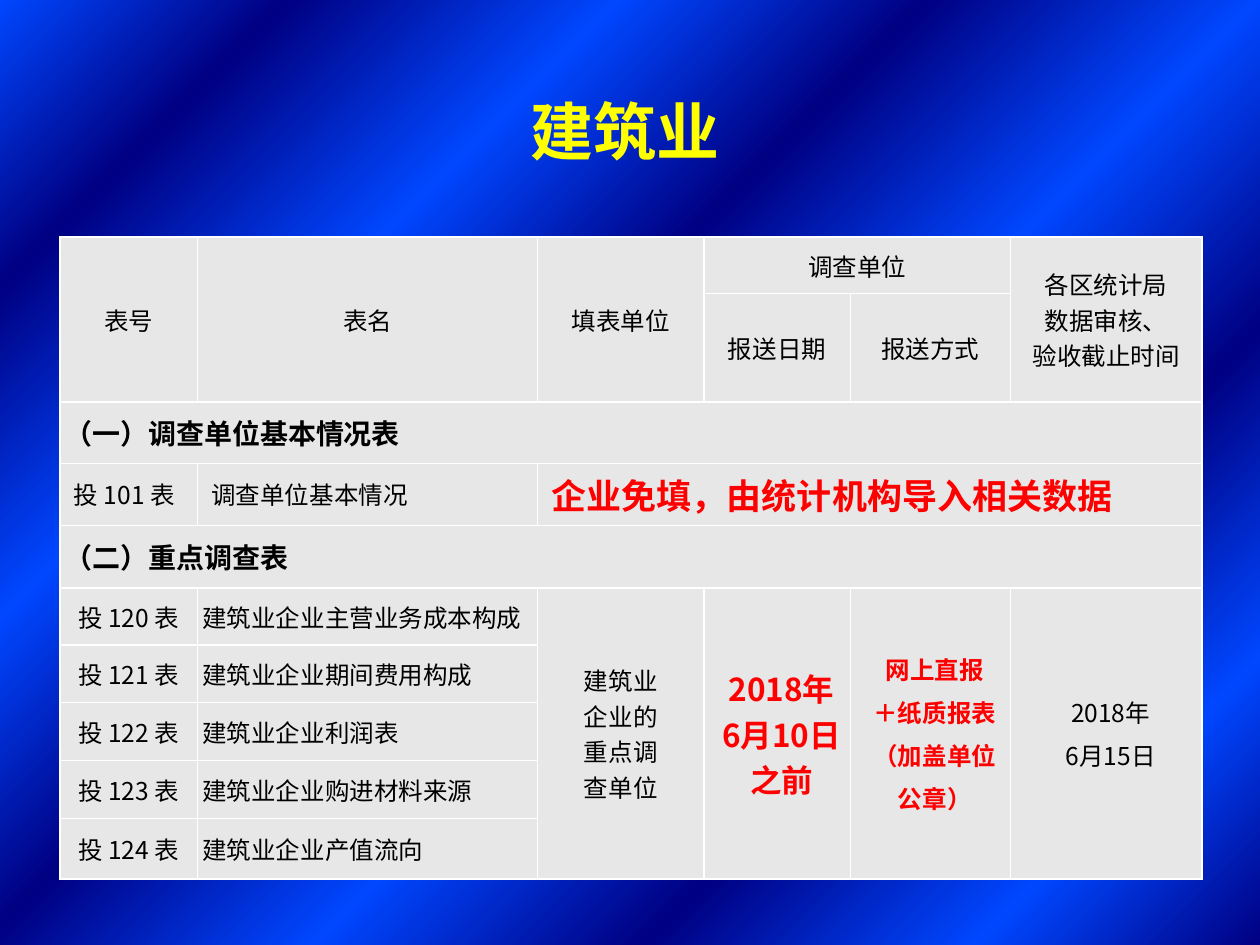
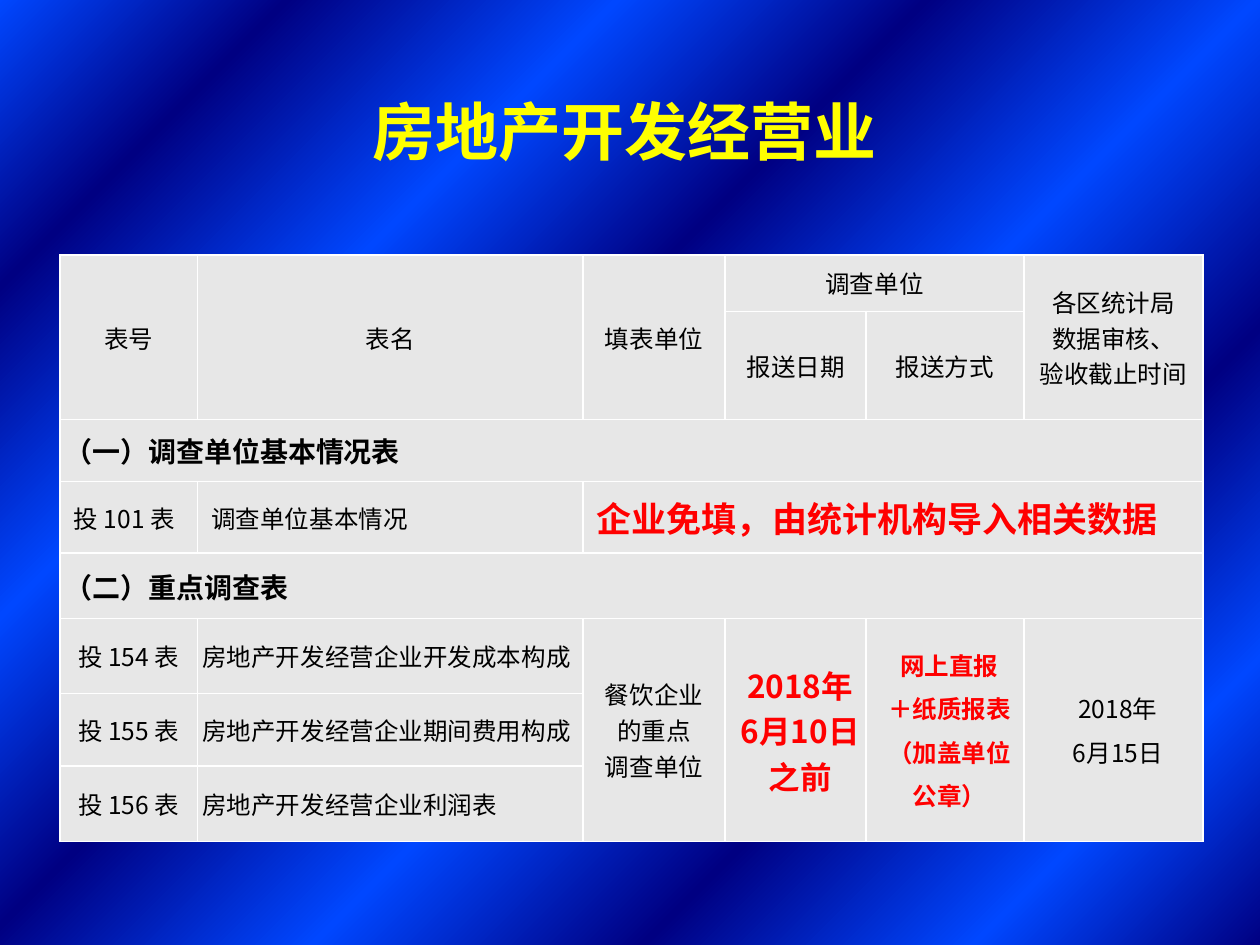
from lxml import etree
from pptx import Presentation
from pptx.dml.color import RGBColor
from pptx.enum.text import MSO_ANCHOR, PP_ALIGN
from pptx.oxml import parse_xml
from pptx.oxml.ns import qn
from pptx.util import Cm, Pt

CENTER, LEFT = PP_ALIGN.CENTER, PP_ALIGN.LEFT
MIDDLE, BOTTOM = MSO_ANCHOR.MIDDLE, MSO_ANCHOR.BOTTOM
BLACK = RGBColor(0x00, 0x00, 0x00)
RED = RGBColor(0xFF, 0x00, 0x00)
YELLOW = RGBColor(0xFF, 0xFF, 0x00)
WHITE = RGBColor(0xFF, 0xFF, 0xFF)
CELL_GREY = RGBColor(0xE7, 0xE7, 0xE7)
NAVY = RGBColor(0x00, 0x00, 0x82)
BRIGHT_BLUE = RGBColor(0x00, 0x47, 0xFF)
BAND_STOPS = (0, 13, 28, 43, 58, 72, 87, 100)

CJK_FONT, LATIN_FONT = "Noto Sans CJK SC", "Arial"
DRAWING_NS = "http://schemas.openxmlformats.org/drawingml/2006/main"
INDENT = Cm(0.18)


def text_format(size=14, color=BLACK, bold=False, name=CJK_FONT,
                alignment=LEFT, indent=0, **paragraph):
    return {"font": {"size": Pt(size), "bold": bold, "name": name},
            "color": color, "indent": indent,
            "paragraph": {"alignment": alignment, **paragraph}}


GAP = {"indent": INDENT, "space_before": Pt(4.3)}
TITLE = text_format(36, YELLOW, True, LATIN_FONT, CENTER, line_spacing=0.9)
CENTERED = text_format(alignment=CENTER)
PLAIN = text_format()
FIRST_SECTION = text_format(16, bold=True, name=LATIN_FONT)
SECOND_SECTION = text_format(16, bold=True)
BASIC_FORM = text_format(**GAP)
EXEMPTION = text_format(20, RED, True, **GAP)
DUE_DATE = text_format(18, RED, True, alignment=CENTER, indent=INDENT)
METHOD = text_format(14, RED, True, alignment=CENTER, **GAP)
DEADLINE = text_format(alignment=CENTER, **GAP)

# row, column, row span, column span, lines, format
COMMON_CELLS = [
    (0, 0, 2, 1, ["表号"], CENTERED),
    (0, 1, 2, 1, ["表名"], CENTERED),
    (0, 2, 2, 1, ["填表单位"], CENTERED),
    (0, 3, 1, 2, ["调查单位"], CENTERED),
    (0, 5, 2, 1, ["各区统计局", "数据审核、", "验收截止时间"], CENTERED),
    (1, 3, 1, 1, ["报送日期"], CENTERED),
    (1, 4, 1, 1, ["报送方式"], CENTERED),
    (2, 0, 1, 6, ["（一）调查单位基本情况表"], FIRST_SECTION),
    (3, 0, 1, 1, ["投 101 表"], BASIC_FORM),
    (3, 1, 1, 1, ["调查单位基本情况"], BASIC_FORM),
    (3, 2, 1, 4, ["企业免填，由统计机构导入相关数据"], EXEMPTION),
    (4, 0, 1, 6, ["（二）重点调查表"], SECOND_SECTION),
]
FIRST_FORM_ROW = 5
REPORTING = [
    (["2018年", "6月10日", "之前"], DUE_DATE),
    (["网上直报", "＋纸质报表", "（加盖单位", "公章）"], METHOD),
    (["2018年", "6月15日"], DEADLINE),
]
INDUSTRIES = [
    {"title": "建筑业", "top": 4.78, "first_number": 120,
     "columns": (2.77, 6.86, 3.35, 2.95, 3.23, 3.86),
     "rows": (1.14, 2.18, 1.24, 1.25, 1.26, 1.15, 1.16, 1.17, 1.17, 1.22),
     "forms": ["建筑业企业主营业务成本构成", "建筑业企业期间费用构成", "建筑业企业利润表",
               "建筑业企业购进材料来源", "建筑业企业产值流向"],
     "respondents": ["建筑业", "企业的", "重点调", "查单位"]},
    {"title": "房地产开发经营业", "top": 5.14, "first_number": 154,
     "columns": (2.77, 7.77, 2.87, 2.84, 3.18, 3.61),
     "rows": (1.14, 2.18, 1.25, 1.44, 1.32, 1.51, 1.46, 1.52),
     "forms": ["房地产开发经营企业开发成本构成", "房地产开发经营企业期间费用构成",
               "房地产开发经营企业利润表"],
     "respondents": ["餐饮企业", "的重点", "调查单位"]},
]


def set_background(master):
    fill = master.background.fill
    fill.solid()
    stops = "".join(
        f'<a:gs pos="{stop * 1000}"><a:srgbClr val="{(NAVY, BRIGHT_BLUE)[i % 2]}"/></a:gs>'
        for i, stop in enumerate(BAND_STOPS))
    gradient = parse_xml(
        f'<a:gradFill xmlns:a="{DRAWING_NS}" rotWithShape="1"><a:gsLst>{stops}</a:gsLst>'
        '<a:path path="circle"><a:fillToRect l="100000" t="100000"/></a:path></a:gradFill>')
    solid = next(master.element.iter(qn("a:solidFill")))
    solid.getparent().replace(solid, gradient)


def write(frame, lines, style):
    frame.word_wrap = True
    for i, line in enumerate(lines):
        paragraph = frame.add_paragraph() if i else frame.paragraphs[0]
        for key, value in style["paragraph"].items():
            setattr(paragraph, key, value)
        if style["indent"]:
            properties = paragraph._p.get_or_add_pPr()
            properties.set("marL", str(int(style["indent"])))
            properties.set("indent", "0")
        run = paragraph.add_run()
        run.text = line
        for key, value in style["font"].items():
            setattr(run.font, key, value)
        run.font.color.rgb = style["color"]
        etree.SubElement(run._r.get_or_add_rPr(), qn("a:ea"), typeface=CJK_FONT)


def format_cell(cell):
    margins = {"margin_left": Cm(0.1), "margin_right": Cm(0.1),
               "margin_top": 0, "margin_bottom": 0, "vertical_anchor": MIDDLE}
    for key, value in margins.items():
        setattr(cell, key, value)
    properties = cell._tc.get_or_add_tcPr()
    for side in "LRTB":
        border = etree.SubElement(properties, qn(f"a:ln{side}"), w=str(int(Pt(1))))
        solid = etree.SubElement(border, qn("a:solidFill"))
        etree.SubElement(solid, qn("a:srgbClr"), val=str(WHITE))
    cell.fill.solid()
    cell.fill.fore_color.rgb = CELL_GREY


def industry_cells(industry):
    forms = industry["forms"]
    for i, form in enumerate(forms):
        row = FIRST_FORM_ROW + i
        yield row, 0, 1, 1, [f"投 {industry['first_number'] + i} 表"], CENTERED
        yield row, 1, 1, 1, [form], PLAIN
    shared = [(industry["respondents"], CENTERED), *REPORTING]
    for column, (lines, style) in enumerate(shared, start=2):
        yield FIRST_FORM_ROW, column, len(forms), 1, lines, style


def add_title(slide, title):
    box = slide.shapes.add_textbox(Cm(2.84), Cm(1.24), Cm(19.51), Cm(2.29))
    box.text_frame.vertical_anchor = BOTTOM
    write(box.text_frame, [title], TITLE)


def add_schedule(slide, industry):
    widths, heights = industry["columns"], industry["rows"]
    schedule = slide.shapes.add_table(
        len(heights), len(widths), Cm(1.21), Cm(industry["top"]),
        Cm(sum(widths)), Cm(sum(heights))).table
    schedule.first_row = schedule.horz_banding = False
    for column, width in zip(schedule.columns, widths):
        column.width = Cm(width)
    for row, height in zip(schedule.rows, heights):
        row.height = Cm(height)
    for cell in schedule.iter_cells():
        format_cell(cell)
    for row, column, down, across, lines, style in [*COMMON_CELLS, *industry_cells(industry)]:
        cell = schedule.cell(row, column)
        if down * across > 1:
            cell.merge(schedule.cell(row + down - 1, column + across - 1))
        write(cell.text_frame, lines, style)


def main():
    deck = Presentation()
    deck.slide_width, deck.slide_height = Cm(25.4), Cm(19.05)
    set_background(deck.slide_master)
    blank = deck.slide_layouts[6]
    for industry in INDUSTRIES:
        slide = deck.slides.add_slide(blank)
        add_title(slide, industry["title"])
        add_schedule(slide, industry)
    deck.save("out.pptx")


if __name__ == "__main__":
    main()
